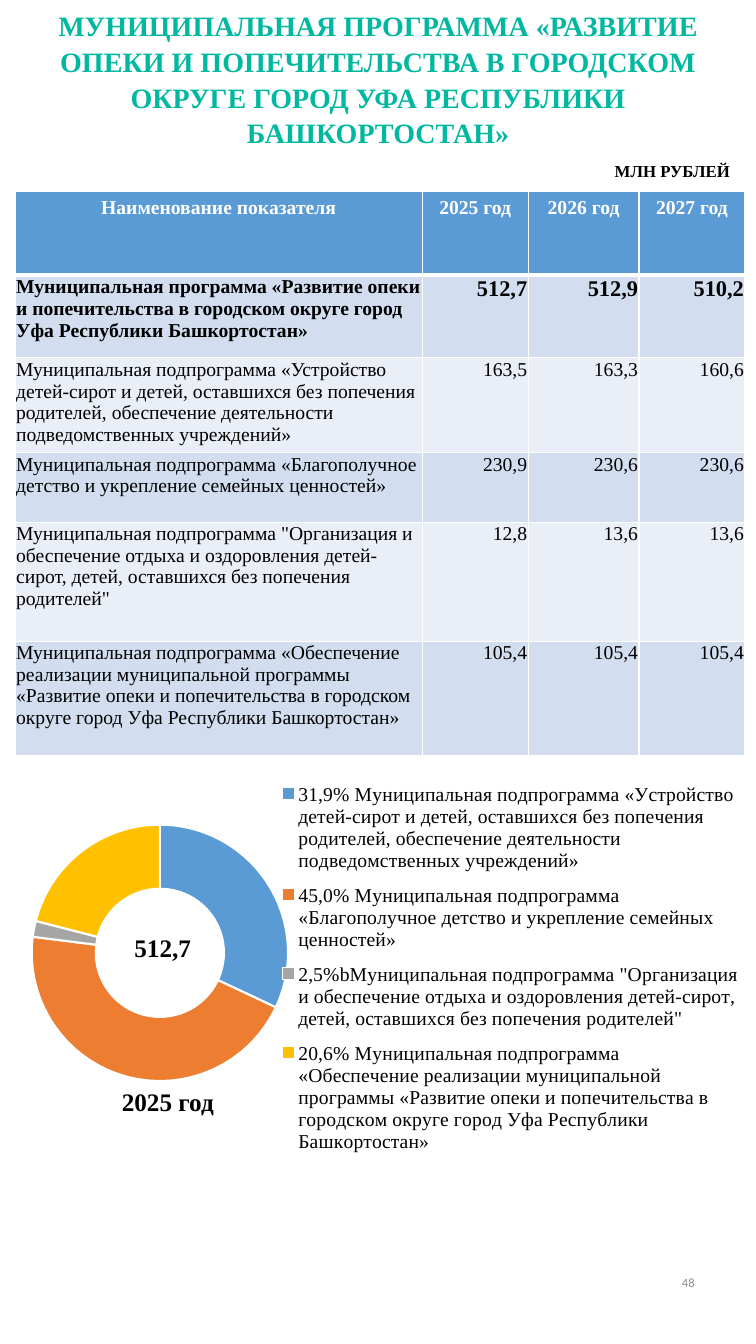
from lxml import etree
from pptx import Presentation
from pptx import util as u
from pptx.chart.data import CategoryChartData
from pptx.dml.color import RGBColor
from pptx.enum import chart as charts, shapes, text
from pptx.oxml import ns, parse_xml

WIDTH, HEIGHT = 7.5, 13.33
SERIF = "Times New Roman"
COLORS = {"title": "00B8A0", "black": "000000", "white": "FFFFFF", "number": "8C8C8C",
          "header": "5B9BD5", "band": "D2DEEF", "light": "EAEFF7"}
SLICE_COLORS = ["5B9BD5", "ED7D31", "A5A5A5", "FFC000"]
ALIGN = text.PP_ALIGN

TITLE = ("МУНИЦИПАЛЬНАЯ ПРОГРАММА «РАЗВИТИЕ ОПЕКИ И ПОПЕЧИТЕЛЬСТВА В ГОРОДСКОМ "
         "ОКРУГЕ ГОРОД УФА РЕСПУБЛИКИ БАШКОРТОСТАН»")
PROGRAM = "«Развитие опеки и попечительства в городском округе город Уфа Республики Башкортостан»"
PLACEMENT = ("Муниципальная подпрограмма «Устройство детей-сирот и детей, оставшихся без попечения "
             "родителей, обеспечение деятельности подведомственных учреждений»")
FAMILY = ("Муниципальная подпрограмма «Благополучное детство и укрепление "
          "семейных ценностей»")
HOLIDAYS = ('Муниципальная подпрограмма "Организация и обеспечение отдыха и оздоровления '
            'детей-сирот, детей, оставшихся без попечения родителей"')
DELIVERY = f"Муниципальная подпрограмма «Обеспечение реализации муниципальной программы {PROGRAM}"

BUDGET = [
    ("Наименование показателя", "2025 год", "2026 год", "2027 год"),
    (f"Муниципальная программа {PROGRAM}", "512,7", "512,9", "510,2"),
    (PLACEMENT, "163,5", "163,3", "160,6"),
    (FAMILY, "230,9", "230,6", "230,6"),
    (HOLIDAYS, "12,8", "13,6", "13,6"),
    (DELIVERY, "105,4", "105,4", "105,4"),
]
COLUMN_WIDTHS = [4.04, 1.05, 1.1, 1.05]
ROW_HEIGHTS = [0.83, 0.82, 0.94, 0.69, 1.18, 1.14]
SHARES = [(f"31,9% {PLACEMENT}", 32), (f"45,0% {FAMILY}", 45),
          (f"2,5%b{HOLIDAYS}", 2), (f"20,6% {DELIVERY}", 21)]


def inches(*lengths):
    """Convert lengths in inches to slide units."""
    return [u.Inches(length) for length in lengths]


def set_font(font, size, color="black", bold=False, name=SERIF):
    """Format a font."""
    font.name, font.size, font.bold = name, u.Pt(size), bold
    font.color.rgb = RGBColor.from_string(COLORS[color])


def write(frame, words, size, align=ALIGN.LEFT, **style):
    """Put one formatted paragraph in a text frame."""
    frame.text = words
    paragraph = frame.paragraphs[0]
    paragraph.alignment = align
    set_font(paragraph.font, size, **style)
    return paragraph


def add_label(slide, box, words, size, anchor=text.MSO_ANCHOR.TOP, **style):
    """Add a text box."""
    frame = slide.shapes.add_textbox(*inches(*box)).text_frame
    frame.word_wrap = True
    frame.vertical_anchor = anchor
    write(frame, words, size, **style)


def add_title(slide):
    """Place and format the title."""
    title = slide.shapes.title
    title.left, title.top, title.width, title.height = inches(0, 0, WIDTH, 1.54)
    frame = title.text_frame
    paragraph = write(frame, TITLE, 20, ALIGN.CENTER, color="title", bold=True)
    paragraph.line_spacing, paragraph.space_after = 1.07, u.Pt(8)
    frame.vertical_anchor = text.MSO_ANCHOR.MIDDLE
    frame.auto_size = text.MSO_AUTO_SIZE.NONE


def set_borders(cell, bottom):
    """Draw white cell borders with the given bottom width."""
    properties = cell._tc.get_or_add_tcPr()
    for position, (side, width) in enumerate([("L", 1), ("R", 1), ("T", 1), ("B", bottom)]):
        properties.insert(position, parse_xml(
            f'<a:ln{side} {ns.nsdecls("a")} w="{u.Pt(width)}"><a:solidFill>'
            f'<a:srgbClr val="{COLORS["white"]}"/></a:solidFill></a:ln{side}>'))


def format_cell(cell, words, row, column):
    """Fill one budget cell according to its row and column."""
    header, total = row == 0, row == 1
    if header:
        align = ALIGN.CENTER
    else:
        align = ALIGN.RIGHT if column else ALIGN.LEFT
        cell.margin_left = cell.margin_right = cell.margin_top = u.Inches(0.01)
        cell.margin_bottom = 0
    write(cell.text_frame, words, 16 if total and column else 14, align,
          color="white" if header else "black", bold=header or total)
    cell.fill.solid()
    fill = "header" if header else "band" if row % 2 else "light"
    cell.fill.fore_color.rgb = RGBColor.from_string(COLORS[fill])
    set_borders(cell, 3 if header else 1)


def add_budget(slide):
    """Add the budget table."""
    box = inches(0.15, 1.9, sum(COLUMN_WIDTHS), sum(ROW_HEIGHTS))
    table = slide.shapes.add_table(len(ROW_HEIGHTS), len(COLUMN_WIDTHS), *box).table
    for column, width in zip(table.columns, COLUMN_WIDTHS):
        column.width = u.Inches(width)
    for row, height in zip(table.rows, ROW_HEIGHTS):
        row.height = u.Inches(height)
    for row, values in enumerate(BUDGET):
        for column, words in enumerate(values):
            format_cell(table.cell(row, column), words, row, column)


def set_layout(element, before, target=None, **shares):
    """Place a chart part by shares of the chart's size."""
    for old in element.findall(ns.qn("c:layout")):
        element.remove(old)
    layout = etree.Element(ns.qn("c:layout"))
    manual = etree.SubElement(layout, ns.qn("c:manualLayout"))
    settings = {"layoutTarget": target} if target else {}
    settings.update(xMode="edge", yMode="edge", **shares)
    for name, value in settings.items():
        etree.SubElement(manual, ns.qn(f"c:{name}")).set("val", str(value))
    element.find(ns.qn(before)).addprevious(layout)


def add_ring(slide):
    """Add the doughnut chart with its legend."""
    data = CategoryChartData()
    data.categories = [name for name, _ in SHARES]
    data.add_series("2025 год", [share for _, share in SHARES])
    chart = slide.shapes.add_chart(
        charts.XL_CHART_TYPE.DOUGHNUT, *inches(0, 7.3, WIDTH, 4.35), data).chart
    set_font(chart.font, 10, name="Calibri")
    chart.has_title = False
    chart.has_legend = True
    legend = chart.legend
    legend.position = charts.XL_LEGEND_POSITION.RIGHT
    legend.include_in_layout = False
    set_font(legend.font, 14)
    set_layout(legend._element, "c:overlay", x=0.37, y=0.08, w=0.61, h=0.9)
    plot = chart.plots[0]
    plot.vary_by_categories = True
    plot._element.find(ns.qn("c:holeSize")).set("val", "75")
    set_layout(plot._element.getparent(), "c:doughnutChart", "inner",
               x=0.042, y=0.202, w=0.339, h=0.585)
    for index, color in enumerate(SLICE_COLORS):
        form = plot.series[0].points[index].format
        form.fill.solid()
        form.fill.fore_color.rgb = RGBColor.from_string(color)
        form.line.color.rgb = RGBColor.from_string(COLORS["white"])
        form.line.width = u.Pt(1.5)


def add_total(slide):
    """Add the total in the middle of the ring."""
    shape = slide.shapes.add_shape(shapes.MSO_SHAPE.RECTANGLE, *inches(1.13, 9.1, 0.97, 0.59))
    shape.shadow.inherit = False
    white = RGBColor.from_string(COLORS["white"])
    shape.fill.solid()
    shape.fill.fore_color.rgb = white
    shape.line.color.rgb = white
    shape.line.width = u.Pt(1)
    shape.text_frame.vertical_anchor = text.MSO_ANCHOR.MIDDLE
    write(shape.text_frame, "512,7", 18, ALIGN.CENTER, bold=True)


def main():
    """Build the slide and save it."""
    presentation = Presentation()
    presentation.slide_width, presentation.slide_height = inches(WIDTH, HEIGHT)
    slide = presentation.slides.add_slide(presentation.slide_layouts[5])
    add_title(slide)
    add_ring(slide)
    add_total(slide)
    add_budget(slide)
    add_label(slide, (1.11, 10.72, 1.2, 0.45), "2025 год", 18, bold=True)
    add_label(slide, (6, 1.54, 1.5, 0.3), "МЛН РУБЛЕЙ", 12, bold=True)
    add_label(slide, (5.3, 12.36, 1.69, 0.71), "48", 9, anchor=text.MSO_ANCHOR.MIDDLE,
              align=ALIGN.RIGHT, color="number", name="Calibri")
    presentation.save("out.pptx")


if __name__ == "__main__":
    main()
